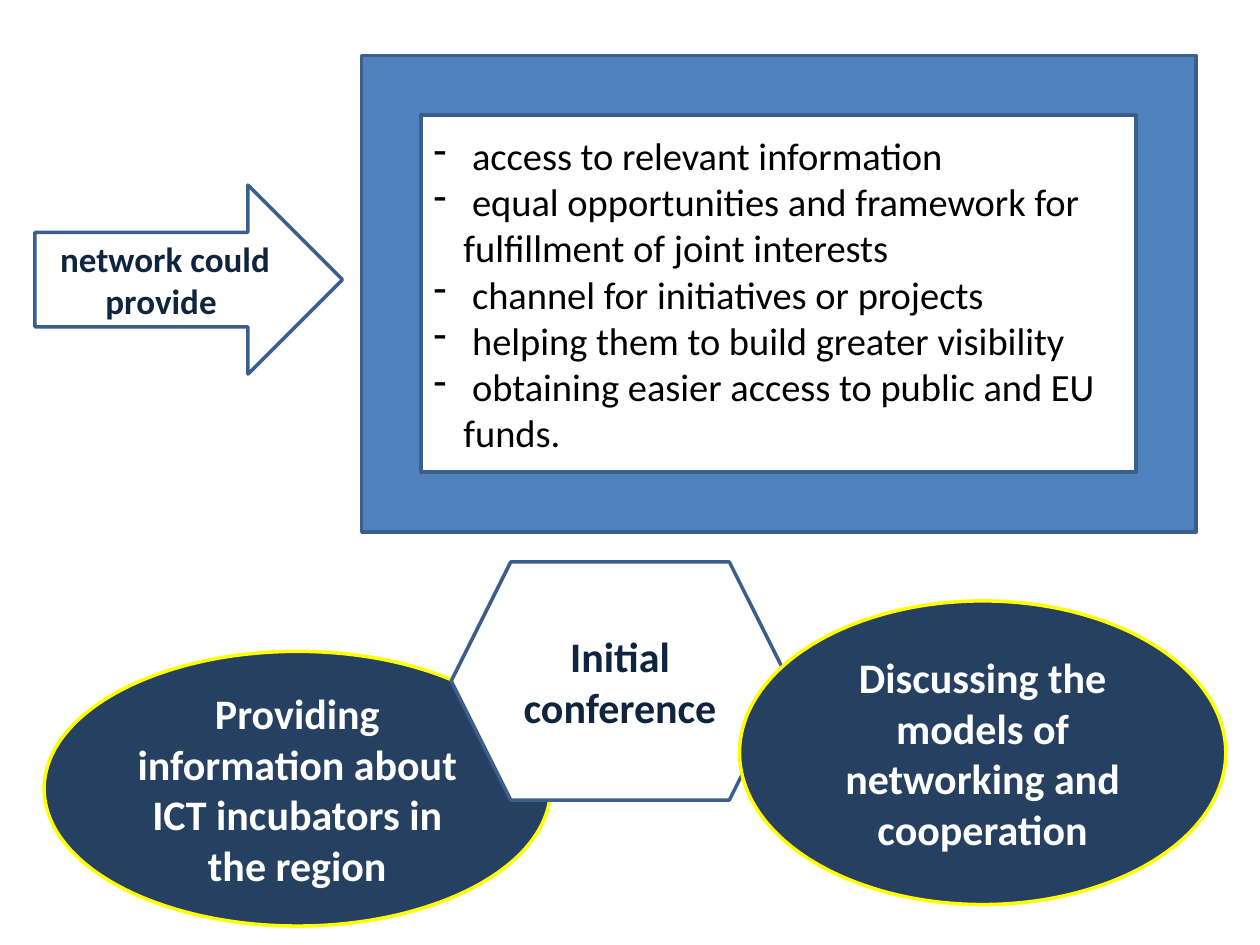
"""Build a slide on what a network could provide and its initial conference."""
import pptx
import pptx.dml.color
import pptx.enum.shapes
import pptx.enum.text
import pptx.util
from lxml import etree

Pt = pptx.util.Pt
KIND = pptx.enum.shapes.MSO_SHAPE
ALIGN = pptx.enum.text.PP_ALIGN
MIDDLE = pptx.enum.text.MSO_ANCHOR.MIDDLE

GAINS = [
    " access to relevant information",
    " equal opportunities and framework for fulfillment of joint interests",
    " channel for initiatives or projects",
    " helping them to build greater visibility",
    " obtaining easier access to public and EU funds.",
]
STYLES = {
    "frame": {"fill": "4F81BD", "line": "3A5F8C", "ink": "000000", "bold": False},
    "plain": {"fill": "FFFFFF", "line": "3A5F8C", "ink": "0F243E", "bold": True},
    "dark": {"fill": "254061", "line": "FFFF00", "ink": "FFFFFF", "bold": True},
}
SHAPES = [
    (KIND.FRAME, "frame", (206.7, 31.7, 476.6, 272.2), 22, GAINS),
    (KIND.RIGHT_ARROW, "plain", (20, 105.8, 175.7, 108), 20,
     ["network could provide "]),
    (KIND.OVAL, "dark", (25.2, 372.2, 289.4, 157), 24,
     ["Providing information about ICT incubators in the region"]),
    (KIND.HEXAGON, "plain", (257.8, 321.1, 193, 136.1), 24,
     ["Initial conference"]),
    (KIND.OVAL, "dark", (422.6, 343.4, 277.9, 173.5), 24,
     ["Discussing the models of networking and cooperation"]),
]
INDENT = Pt(17)


def color(code):
    return pptx.dml.color.RGBColor.from_string(code)


def dash(para):
    props = para._p.get_or_add_pPr()
    props.set("marL", str(INDENT))
    props.set("indent", str(-INDENT))
    space = props.nsmap["a"]
    etree.SubElement(props, f"{{{space}}}buFontTx")
    etree.SubElement(props, f"{{{space}}}buChar").set("char", "-")


def write(frame, lines, size, style):
    frame.word_wrap = True
    frame.vertical_anchor = MIDDLE
    listed = len(lines) > 1
    looks = {"name": "Calibri", "size": Pt(size), "bold": style["bold"]}
    for i, line in enumerate(lines):
        para = frame.add_paragraph() if i else frame.paragraphs[0]
        para.alignment = ALIGN.LEFT if listed else ALIGN.CENTER
        if listed:
            dash(para)
        run = para.add_run()
        run.text = line
        for key, value in looks.items():
            setattr(run.font, key, value)
        run.font.color.rgb = color(style["ink"])


def draw(slide, kind, look, box, size, lines):
    style = STYLES[look]
    shape = slide.shapes.add_shape(kind, *map(Pt, box))
    shape.shadow.inherit = False
    shape.fill.solid()
    shape.fill.fore_color.rgb = color(style["fill"])
    shape.line.color.rgb = color(style["line"])
    shape.line.width = Pt(2)
    write(shape.text_frame, lines, size, style)


def main():
    deck = pptx.Presentation()
    deck.slide_width, deck.slide_height = Pt(720), Pt(540)
    slide = deck.slides.add_slide(deck.slide_layouts[6])
    for item in SHAPES:
        draw(slide, *item)
    deck.save("out.pptx")


if __name__ == "__main__":
    main()
